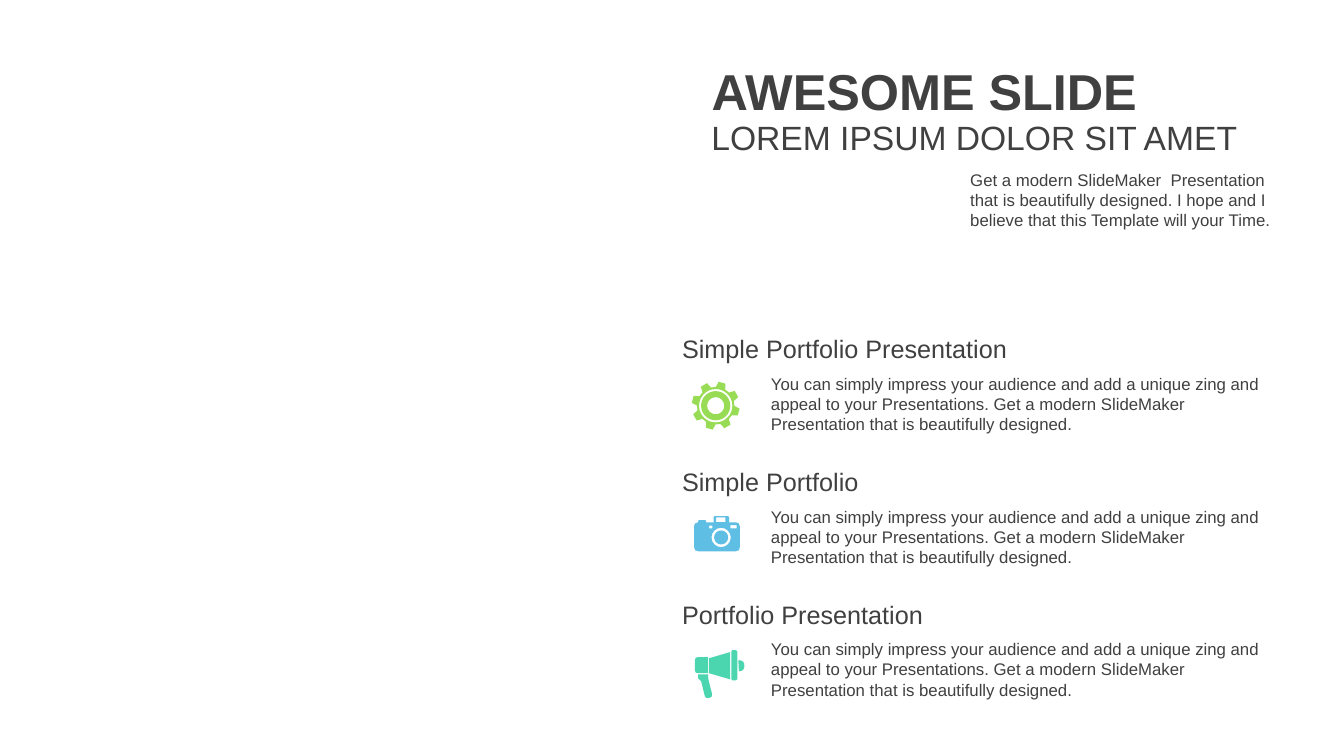
"""Build a slide with a title block and three icon rows on its right half."""
import dataclasses
import math
import typing

import pptx
import pptx.dml.color
import pptx.enum.text
import pptx.oxml.ns
import pptx.shapes.autoshape
import pptx.slide
import pptx.util

Pt = pptx.util.Pt
Align = pptx.enum.text.PP_ALIGN
Anchor = pptx.enum.text.MSO_ANCHOR


@dataclasses.dataclass(frozen=True)
class Theme:
    font: str = "Arial"
    ink: str = "404040"
    green: str = "98DC56"
    blue: str = "5EBEE4"
    teal: str = "4CD6B0"
    title: float = 36
    sub: float = 24
    head: float = 18
    body: float = 12


class Box(typing.NamedTuple):
    left: float
    top: float
    width: float
    height: float


class Corner(typing.NamedTuple):
    x: float
    y: float
    bend: float = 0


class Node(typing.NamedTuple):
    x: float
    y: float
    pull: bool = False


Outline = list[Node]


@dataclasses.dataclass(frozen=True)
class Row:
    head: str
    lines: list[Outline]
    left: float
    drop: float
    color: str


THEME = Theme()
STEP = 94.7
FIRST = 239
BODY = ("You can simply impress your audience and add a unique zing and appeal to your "
        "Presentations. Get a modern SlideMaker  Presentation that is beautifully designed.")
INTRO = ("Get a modern SlideMaker  Presentation that is beautifully designed. "
         "I hope and I believe that this Template will your Time.")


def polar(radius: float, angle: float, x: float = 0, y: float = 0, pull: bool = False) -> Node:
    turn = math.radians(angle)
    return Node(x + radius * math.sin(turn), y - radius * math.cos(turn), pull)


def ring(radius: float, x: float = 0, y: float = 0) -> Outline:
    outer = radius / math.cos(math.radians(22.5))
    nodes = [polar(radius, 0, x, y)]
    for angle in range(0, 360, 45):
        nodes += [polar(outer, angle + 22.5, x, y, True), polar(radius, angle + 45, x, y)]
    return nodes


def block(left: float, top: float, right: float, base: float) -> Outline:
    return [Node(left, top), Node(right, top), Node(right, base), Node(left, base)]


def toward(spot: Corner, near: Corner) -> Node:
    part = spot.bend / math.dist(spot[:2], near[:2])
    return Node(spot.x + part * (near.x - spot.x), spot.y + part * (near.y - spot.y))


def curved(*corners: Corner) -> Outline:
    nodes: Outline = []
    for i, spot in enumerate(corners):
        if spot.bend:
            after = corners[(i + 1) % len(corners)]
            nodes += [toward(spot, corners[i - 1]), Node(spot.x, spot.y, True),
                      toward(spot, after)]
        else:
            nodes.append(Node(spot.x, spot.y))
    return nodes


def gear() -> list[Outline]:
    tooth = ((13.4, -15), (17.2, -8.5), (17.2, 8.5), (13.4, 15))
    rim = [polar(radius, 15.5 + 45 * n + turn) for n in range(8) for radius, turn in tooth]
    return [rim, ring(11.9), ring(10.4), ring(6.1)]


def camera() -> list[Outline]:
    case = curved(
        Corner(0, 4.5, 2.8), Corner(2.9, 4.5), Corner(2.9, 2.9, 0.6), Corner(8.6, 2.9, 0.6),
        Corner(8.6, 4.5), Corner(13.9, 4.5), Corner(13.9, 0, 0.8), Corner(25, 0, 0.8),
        Corner(25, 4.5), Corner(32.7, 4.5, 3), Corner(32.7, 25.2, 3), Corner(0, 25.2, 3))
    return [case, ring(6.9, 19.3, 15.3), ring(5, 19.3, 15.3), block(10.8, 6.9, 13, 8.8),
            block(26, 6.6, 30.4, 8.8), block(15.8, 1, 22.4, 4.4)]


def horn() -> list[Outline]:
    grip = curved(Corner(9.4, 17.3), Corner(9.4, 20.2, 1), Corner(12.8, 33.5, 2.4),
                  Corner(7.5, 34.8, 2.4), Corner(4.2, 21.2, 1), Corner(2.2, 20.8, 0.8),
                  Corner(2.2, 17.3))
    knob = curved(Corner(31, 7.2), Corner(35.3, 7.2, 3.9), Corner(35.3, 15.1, 3.9),
                  Corner(31.4, 15.1))
    back = curved(Corner(0, 5, 2), Corner(9.4, 5), Corner(9.4, 16.5), Corner(0, 16.5, 2))
    cone = [Node(25.2, 1.4), Node(25.2, 20.9), Node(10.1, 16.5), Node(10.1, 5.8)]
    rim = curved(Corner(26, 0, 0.9), Corner(30.3, 0, 0.9), Corner(30.3, 21.6, 0.9),
                 Corner(26, 21.6, 0.9))
    return [grip, knob, back, cone, rim]


def write(shape: pptx.shapes.autoshape.Shape, text: str, *, box: Box, size: float,
          bold: bool = False, align: Align = Align.LEFT, anchor: Anchor = Anchor.TOP,
          space: float = 1, inset: float = 7.2) -> None:
    shape.left, shape.top, shape.width, shape.height = map(Pt, box)
    frame = shape.text_frame
    frame.word_wrap = True
    frame.auto_size = pptx.enum.text.MSO_AUTO_SIZE.NONE
    frame.vertical_anchor = anchor
    frame.margin_left, frame.margin_right = Pt(inset), Pt(7.2)
    frame.margin_top = frame.margin_bottom = Pt(3.6)
    line = frame.paragraphs[0]
    line.alignment, line.line_spacing = align, space
    line.space_before = line.space_after = Pt(0)
    run = line.add_run()
    run.text = text
    run.font.name, run.font.size, run.font.bold = THEME.font, Pt(size), bold
    run.font.color.rgb = pptx.dml.color.RGBColor.from_string(THEME.ink)


def label(slide: pptx.slide.Slide, text: str, *, box: Box, **style: typing.Any) -> None:
    write(slide.shapes.add_textbox(*map(Pt, box)), text, box=box, **style)


def bend(icon: pptx.shapes.autoshape.Shape, lines: list[Outline]) -> None:
    steps = list(icon.element.iter(pptx.oxml.ns.qn("a:lnTo")))
    nodes = [node for line in lines for node in line[1:]]
    for node, step, after in zip(nodes, steps, steps[1:]):
        if node.pull:
            step.tag = pptx.oxml.ns.qn("a:quadBezTo")
            step.append(after[0])
            after.getparent().remove(after)


def draw(slide: pptx.slide.Slide, row: Row, top: float) -> None:
    spots = [[(Pt(row.left + node.x), Pt(top + row.drop + node.y)) for node in line]
             for line in row.lines]
    pen = slide.shapes.build_freeform(*spots[0][0], scale=1.0)
    pen.add_line_segments(spots[0][1:])
    for line in spots[1:]:
        pen.move_to(*line[0])
        pen.add_line_segments(line[1:])
    icon = pen.convert_to_shape()
    bend(icon, row.lines)
    icon.shadow.inherit = False
    icon.fill.solid()
    icon.fill.fore_color.rgb = pptx.dml.color.RGBColor.from_string(row.color)
    icon.line.fill.background()


def main() -> None:
    deck = pptx.Presentation()
    deck.slide_width, deck.slide_height = Pt(960), Pt(540)
    slide = deck.slides.add_slide(deck.slide_layouts[5])
    write(slide.shapes.title, "AWESOME SLIDE", box=Box(501.1, 38.9, 414.7, 51.1),
          size=THEME.title, bold=True, align=Align.JUSTIFY, anchor=Anchor.MIDDLE)
    label(slide, "LOREM IPSUM DOLOR SIT AMET", box=Box(501.1, 79.9, 414.7, 36),
          size=THEME.sub, align=Align.JUSTIFY, anchor=Anchor.MIDDLE)
    label(slide, INTRO, box=Box(693, 117.5, 222.5, 51.1), size=THEME.body, inset=0)
    rows = [
        Row("Simple Portfolio Presentation", gear(), 511.2, 50.8, THEME.green),
        Row("Simple Portfolio", camera(), 495.8, 34.9, THEME.blue),
        Row("Portfolio Presentation", horn(), 496.4, 36, THEME.teal),
    ]
    for i, row in enumerate(rows):
        top = FIRST + i * STEP
        label(slide, row.head, box=Box(480.1, top, 293.8, 24.5), size=THEME.head, space=0.8)
        label(slide, BODY, box=Box(543.6, top + 24.5, 365.8, 51.1), size=THEME.body)
        draw(slide, row, top)
    deck.save("out.pptx")


if __name__ == "__main__":
    main()
